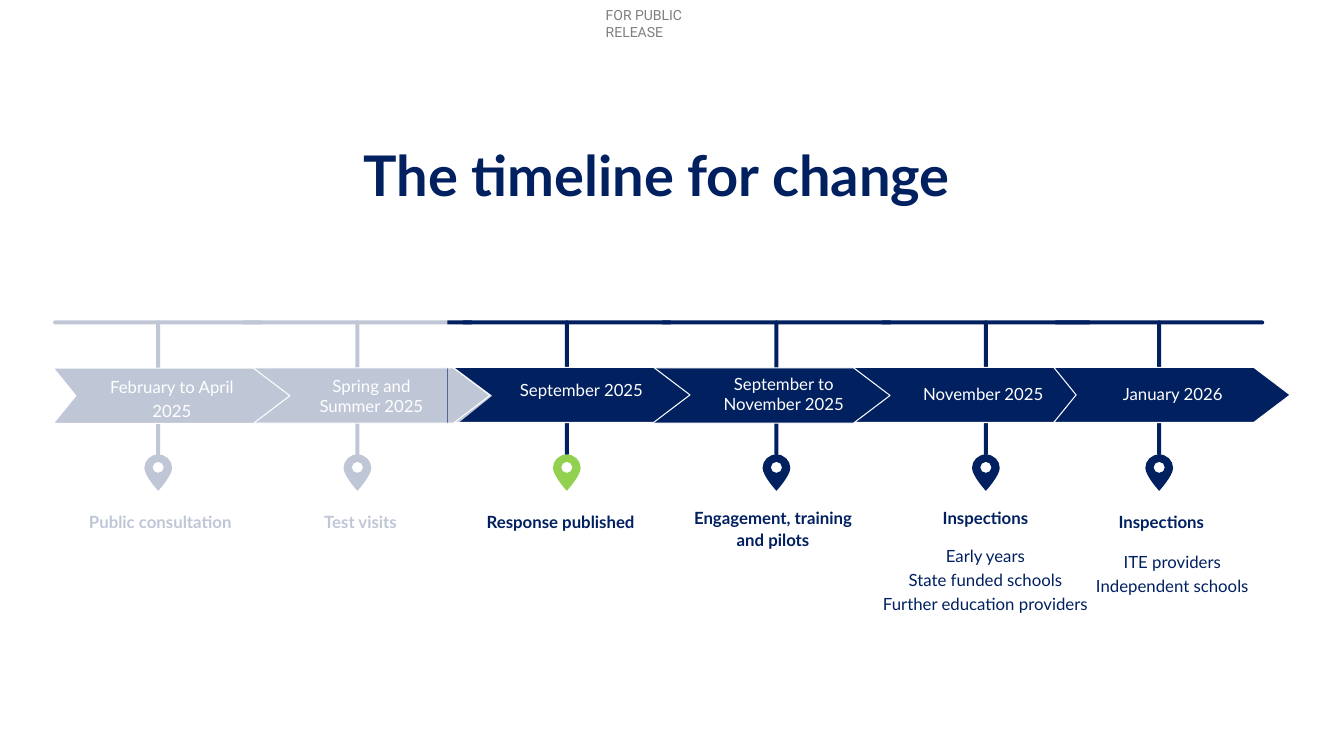
"""Build the timeline for change slide."""
import pptx
import pptx.dml.color
import pptx.enum.shapes
import pptx.enum.text
import pptx.oxml.ns
import pptx.util
from lxml import etree

Pt = pptx.util.Pt
qn = pptx.oxml.ns.qn
SHAPE = pptx.enum.shapes.MSO_SHAPE
ALIGN = pptx.enum.text.PP_ALIGN
NAVY = pptx.dml.color.RGBColor(0x00, 0x20, 0x60)
GREEN = pptx.dml.color.RGBColor(0x92, 0xD0, 0x50)
WHITE = pptx.dml.color.RGBColor(0xFF, 0xFF, 0xFF)
GREY = pptx.dml.color.RGBColor(0x7F, 0x7F, 0x7F)

prs = pptx.Presentation()
prs.slide_width, prs.slide_height = Pt(960), Pt(540)
s = prs.slides.add_slide(prs.slide_layouts[6])


def add_text(lines, left, top, width, height, color=NAVY, size=12, bold=False,
             spacing=None, font="Lato", align=ALIGN.CENTER, middle=False):
    tb = s.shapes.add_textbox(Pt(left), Pt(top), Pt(width), Pt(height))
    tf = tb.text_frame
    tf.word_wrap = True
    tf.auto_size = pptx.enum.text.MSO_AUTO_SIZE.SHAPE_TO_FIT_TEXT
    if middle:
        tf.vertical_anchor = pptx.enum.text.MSO_ANCHOR.MIDDLE
    tf.text = "\n".join(lines)
    for p in tf.paragraphs:
        p.alignment = align
        p.line_spacing = spacing
        p.font.name, p.font.size, p.font.bold = font, Pt(size), bold
        p.font.color.rgb = color
    return tf


def paint(sp, color, alpha=None):
    sp.shadow.inherit = False
    sp.fill.solid()
    sp.fill.fore_color.rgb = color
    sp.line.fill.background()
    if alpha:
        clr = sp.fill._xPr.find(".//" + qn("a:srgbClr"))
        etree.SubElement(clr, qn("a:alpha"), val=str(alpha * 1000))


RAIL_TOP, STEM_HEIGHT, BAR = 228.9, 96.5, 2.9
PIN_TOP = 324.6
CHEVRON_LEFT, CHEVRON_PITCH, CHEVRON_HEIGHT = 38.2, 142.9, 39.4
TIP, NOTCH = 26, 16

PIN_OUTLINE = [(0, 0), (-5.5, 0), (-9.9, 4.4), (-9.9, 9.6), (-9.9, 15.3), (0, 26), (0, 26),
               (0, 26), (9.9, 15.3), (9.9, 9.6), (9.9, 4.4), (5.5, 0), (0, 0)]
PIN_HOLE = [(0, 13.2), (-2.2, 13.2), (-4, 11.4), (-4, 9.3), (-4, 7.1), (-2.2, 5.3), (0, 5.3),
            (2.2, 5.3), (4, 7.1), (4, 9.3), (4, 11.4), (2.2, 13.2), (0, 13.2)]

release = add_text(["FOR PUBLIC RELEASE"], 432.7, 5, 96.5, 12, GREY, 10,
                   font="Roboto", align=ALIGN.LEFT)
release.margin_left = release.margin_right = release.margin_top = release.margin_bottom = 0

stages = [
    (4, 704.2, 150, NAVY, 0, 262.4, "November 2025", (648.7, 267.8, 23.8), 1.2,
     "Inspections", (643.4, 357, 121)),
    (3, 554.6, 165, NAVY, 0, 262.8, "September to November 2025", (506.2, 266.4, 29.5), None,
     "Engagement, training and pilots", (485.6, 357, 133.2)),
    (2, 404.9, 150, GREEN, 0, 262.4, "September 2025", (361.7, 265, 23.8), 1.2,
     "Response published", (340, 360, 121)),
    (1, 255.3, 165, NAVY, NOTCH, 262.8, "Spring and Summer 2025", (211.7, 267.8, 29.5), None,
     "Test visits", (197, 360, 121)),
    (5, 828, 150, NAVY, NOTCH, 262.4, "January 2026", (784.1, 267.8, 23.8), 1.2,
     "Inspections", (769, 360, 121)),
    (0, 113, 150, NAVY, NOTCH, 263, "February to April 2025", (69.1, 267.8, 31), 1.2,
     "Public consultation", (54, 360, 121)),
]

for (slot, x, rail, pin_color, notch, top, date, date_box, spacing,
     label, label_box) in stages:
    for left, width, height in ((x - rail / 2, rail, BAR), (x - BAR / 2, BAR, STEM_HEIGHT)):
        sp = s.shapes.add_shape(SHAPE.ROUNDED_RECTANGLE, Pt(left), Pt(RAIL_TOP),
                                Pt(width), Pt(height))
        sp.adjustments[0] = 0.5
        paint(sp, NAVY)

    ring, eye = [[(Pt(x + dx), Pt(PIN_TOP + dy)) for dx, dy in points]
                 for points in (PIN_OUTLINE, PIN_HOLE)]
    fb = s.shapes.build_freeform(*ring[0])
    fb.add_line_segments(ring[1:])
    fb.move_to(*eye[0])
    fb.add_line_segments(eye[1:], close=True)
    pin = fb.convert_to_shape()
    paint(pin, pin_color)
    segments = [e for e in pin.element.iter(qn("a:lnTo"))]
    for i in range(0, len(segments), 3):
        curve = etree.Element(qn("a:cubicBezTo"))
        segments[i].addprevious(curve)
        for segment in segments[i:i + 3]:
            curve.append(segment[0])
            segment.getparent().remove(segment)

    left = CHEVRON_LEFT + slot * CHEVRON_PITCH
    right, middle, bottom = left + CHEVRON_PITCH, top + CHEVRON_HEIGHT / 2, top + CHEVRON_HEIGHT
    corners = [(left, bottom), (left + notch, middle), (left, top), (right, top),
               (right + TIP, middle)]
    fb = s.shapes.build_freeform(Pt(right), Pt(bottom))
    fb.add_line_segments([(Pt(px), Pt(py)) for px, py in corners])
    chevron = fb.convert_to_shape()
    paint(chevron, NAVY)
    chevron.line.color.rgb = WHITE
    chevron.line.width = Pt(0.75)

    date_left, date_top, date_height = date_box
    add_text([date], date_left, date_top, 107.3, date_height, WHITE,
             spacing=spacing, middle=True)
    label_left, label_top, label_width = label_box
    add_text([label], label_left, label_top, label_width, 22.3, bold=True, spacing=1.13)

add_text(["The timeline for change"], 138.2, 97.2, 661.7, 55.4, size=40, bold=True)
add_text(["Early years", "State funded schools", "Further education providers"],
         620.4, 383.4, 167, 57.6, spacing=1.2)
add_text(["ITE providers", "Independent schools"], 769, 387.7, 136.8, 40.3, spacing=1.2)

veil = s.shapes.add_shape(SHAPE.RECTANGLE, Pt(24.5), Pt(209.5), Pt(295.2), Pt(200.9))
paint(veil, WHITE, 75)
veil_tip = s.shapes.add_shape(SHAPE.ISOSCELES_TRIANGLE, Pt(311.2), Pt(267.8), Pt(49), Pt(31.7))
veil_tip.rotation = 90
veil_tip.adjustments[0] = 0.48
paint(veil_tip, WHITE, 75)

prs.save("out.pptx")
